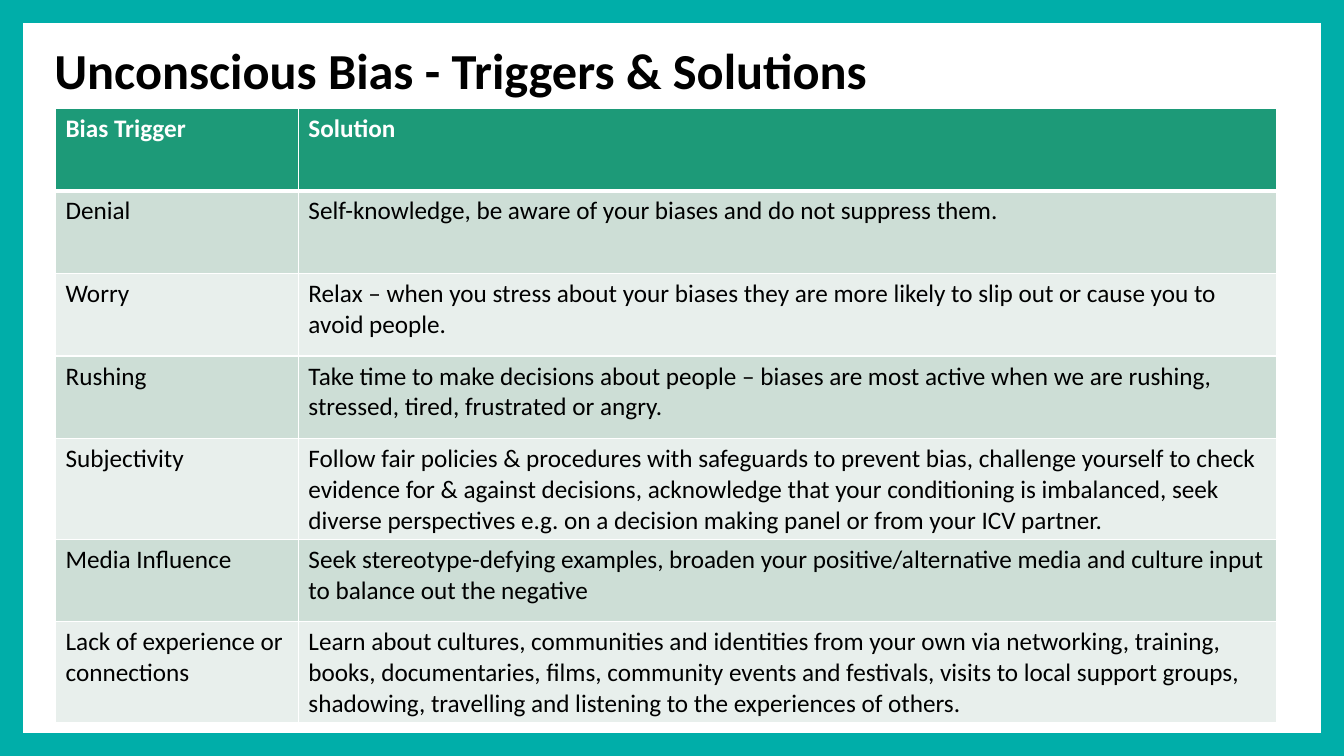
import pptx
import pptx.dml.color
import pptx.enum.shapes
import pptx.enum.text
import pptx.oxml
import pptx.oxml.ns
import pptx.util
from pptx.util import Cm

RGBColor = pptx.dml.color.RGBColor
TEAL = RGBColor(0x00, 0xAE, 0xA9)
GREEN = RGBColor(0x1D, 0x9A, 0x78)
SAGE = RGBColor(0xCD, 0xDE, 0xD6)
MIST = RGBColor(0xE8, 0xEF, 0xEC)
WHITE = RGBColor(0xFF, 0xFF, 0xFF)
BLACK = RGBColor(0x00, 0x00, 0x00)

WIDTH, HEIGHT = 33.87, 19.05
COLUMN_WIDTHS = [6.12, 24.66]
ROW_HEIGHTS = [2.08, 2.08, 2.08, 2.08, 2.49, 2.08, 2.49]
BIAS_ROWS = [
    ("Bias Trigger", "Solution"),
    ("Denial", "Self-knowledge, be aware of your biases and do not suppress them."),
    ("Worry", "Relax – when you stress about your biases they are more likely to slip out "
     "or cause you to avoid people."),
    ("Rushing", "Take time to make decisions about people – biases are most active when we "
     "are rushing, stressed, tired, frustrated or angry."),
    ("Subjectivity", "Follow fair policies & procedures with safeguards to prevent bias, "
     "challenge yourself to check evidence for & against decisions, acknowledge that your "
     "conditioning is imbalanced, seek diverse perspectives e.g. on a decision making panel "
     "or from your ICV partner."),
    ("Media Influence", "Seek stereotype-defying examples, broaden your positive/alternative "
     "media and culture input to balance out the negative"),
    ("Lack of experience or connections", "Learn about cultures, communities and identities "
     "from your own via networking, training, books, documentaries, films, community events "
     "and festivals, visits to local support groups, shadowing, travelling and listening to "
     "the experiences of others."),
]


def write_text(frame, text, size=18, color=BLACK, bold=False, font="Calibri", spacing=1.0):
    paragraph = frame.paragraphs[0]
    paragraph.line_spacing = spacing
    run = paragraph.add_run()
    run.text = text
    run.font.name = font
    run.font.size = pptx.util.Pt(size)
    run.font.bold = bold
    run.font.color.rgb = color


def set_borders(cell, **widths):
    properties = cell._tc.get_or_add_tcPr()
    for index, (side, points) in enumerate(widths.items()):
        border = pptx.oxml.parse_xml(
            f'<a:ln{side} {pptx.oxml.ns.nsdecls("a")} w="{pptx.util.Pt(points)}">'
            f'<a:solidFill><a:srgbClr val="{WHITE}"/></a:solidFill></a:ln{side}>')
        properties.insert(index, border)


class SlideBuilder:
    def __init__(self, slide, frame_color=TEAL, frame_width=17):
        self.slide = slide
        self.frame_color = frame_color
        self.frame_width = frame_width

    def title(self, text, left, top, width, height):
        box = self.slide.shapes.add_textbox(Cm(left), Cm(top), Cm(width), Cm(height))
        box.text_frame.word_wrap = True
        box.text_frame.vertical_anchor = pptx.enum.text.MSO_ANCHOR.MIDDLE
        write_text(box.text_frame, text, size=36, bold=True, spacing=0.9)

    def frame_line(self, *ends):
        line = self.slide.shapes.add_connector(
            pptx.enum.shapes.MSO_CONNECTOR.STRAIGHT, *map(Cm, ends))
        line.line.color.rgb = self.frame_color
        line.line.width = pptx.util.Pt(self.frame_width)
        line._element.spPr.append(
            pptx.oxml.parse_xml(f'<a:effectLst {pptx.oxml.ns.nsdecls("a")}/>'))

    def table(self, rows, left, top, column_widths, row_heights):
        table = self.slide.shapes.add_table(
            len(rows), len(column_widths), Cm(left), Cm(top),
            Cm(sum(column_widths)), Cm(sum(row_heights))).table
        for column, width in zip(table.columns, column_widths):
            column.width = Cm(width)
        for row_index, texts in enumerate(rows):
            table.rows[row_index].height = Cm(row_heights[row_index])
            header = row_index == 0
            fill = GREEN if header else (MIST, SAGE)[row_index % 2]
            for column_index, text in enumerate(texts):
                cell = table.cell(row_index, column_index)
                cell.fill.solid()
                cell.fill.fore_color.rgb = fill
                set_borders(cell, L=1, R=1, T=3 if row_index == 1 else 1, B=3 if header else 1)
                write_text(cell.text_frame, text, color=WHITE if header else BLACK, bold=header)


def main():
    presentation = pptx.Presentation()
    presentation.slide_width = Cm(WIDTH)
    presentation.slide_height = Cm(HEIGHT)
    builder = SlideBuilder(presentation.slides.add_slide(presentation.slide_layouts[6]))
    builder.title("Unconscious Bias - Triggers & Solutions", 1.12, 0.89, 30.78, 1.93)
    inset = 0.28
    for x in (inset, WIDTH - inset):
        builder.frame_line(x, 0, x, HEIGHT)
    for y in (inset, HEIGHT - inset):
        builder.frame_line(0, y, WIDTH, y)
    builder.table(BIAS_ROWS, 1.4, 2.73, COLUMN_WIDTHS, ROW_HEIGHTS)
    presentation.save("out.pptx")


if __name__ == "__main__":
    main()
